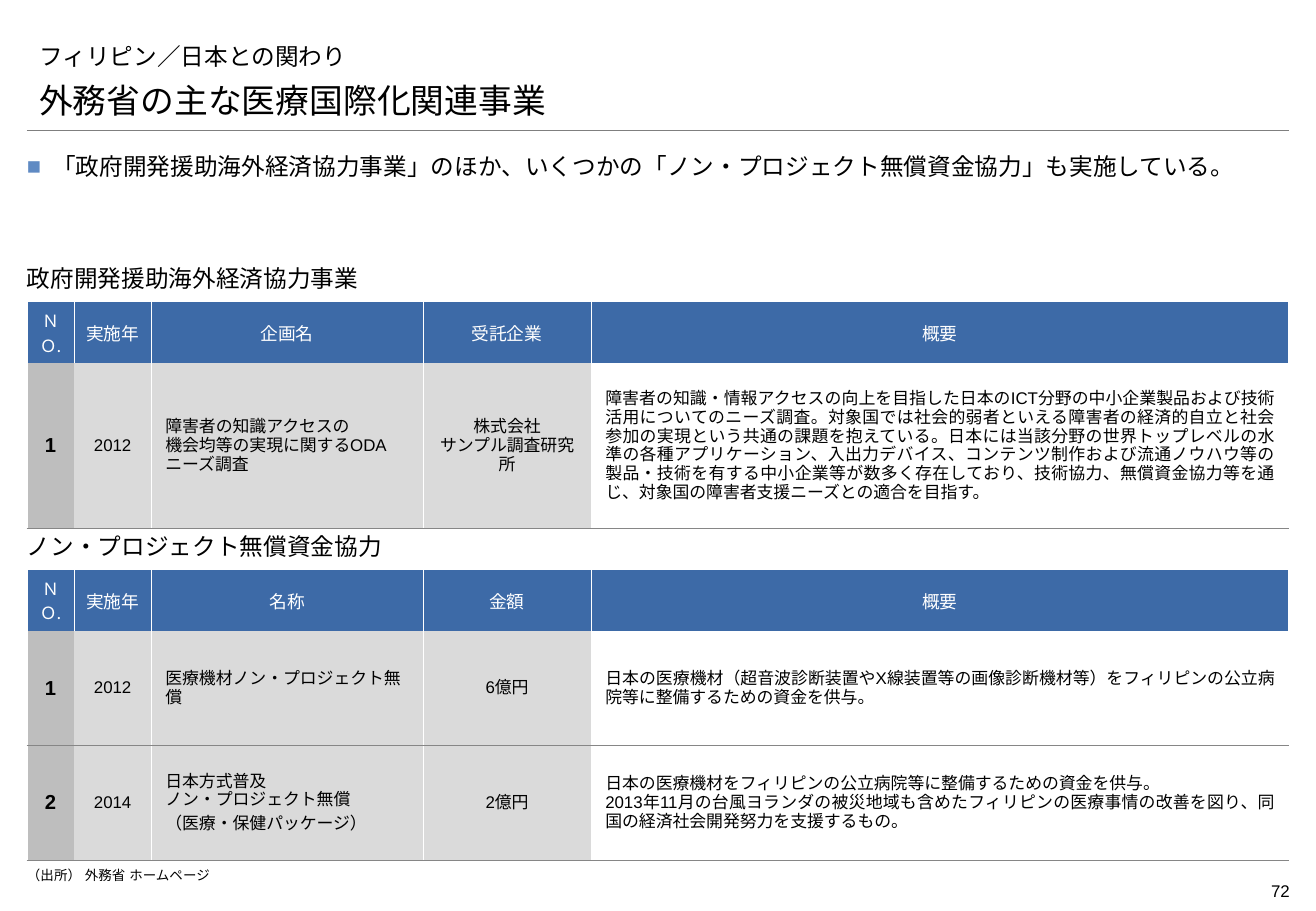
from dataclasses import dataclass

import pptx
import pptx.dml.color
import pptx.enum.shapes
import pptx.enum.text
import pptx.oxml
import pptx.oxml.ns
import pptx.util
from lxml import etree

Pt = pptx.util.Pt
ALIGN = pptx.enum.text.PP_ALIGN
ANCHOR = pptx.enum.text.MSO_ANCHOR
qn = pptx.oxml.ns.qn

TITLE = "フィリピン／日本との関わり"
HEADING = "外務省の主な医療国際化関連事業"
MESSAGE = "「政府開発援助海外経済協力事業」のほか、いくつかの「ノン・プロジェクト無償資金協力」も実施している。"
SOURCE = "（出所） 外務省 ホームページ"
PAGE = "72"

# Each cell is a list of paragraphs; "\n" is a line break inside a paragraph.
SECTIONS = [
    {
        "title": "政府開発援助海外経済協力事業",
        "top": 179.2,
        "row_height": 98,
        "header": ["ＮＯ.", "実施年", "企画名", "受託企業", "概要"],
        "rows": [
            [["1"], ["2012"],
             ["障害者の知識アクセスの\n機会均等の実現に関するODAニーズ調査"],
             ["株式会社\nサンプル調査研究所"],
             ["障害者の知識・情報アクセスの向上を目指した日本のICT分野の中小企業製品および技術活用についての"
              "ニーズ調査。対象国では社会的弱者といえる障害者の経済的自立と社会参加の実現という共通の課題を"
              "抱えている。日本には当該分野の世界トップレベルの水準の各種アプリケーション、入出力デバイス、"
              "コンテンツ制作および流通ノウハウ等の製品・技術を有する中小企業等が数多く存在しており、"
              "技術協力、無償資金協力等を通じ、対象国の障害者支援ニーズとの適合を目指す。"]],
        ],
    },
    {
        "title": "ノン・プロジェクト無償資金協力",
        "top": 337.8,
        "row_height": 68,
        "header": ["ＮＯ.", "実施年", "名称", "金額", "概要"],
        "rows": [
            [["1"], ["2012"], ["医療機材ノン・プロジェクト無償"], ["6億円"],
             ["日本の医療機材（超音波診断装置やX線装置等の画像診断機材等）をフィリピンの公立病院等に"
              "整備するための資金を供与。"]],
            [["2"], ["2014"],
             ["日本方式普及\nノン・プロジェクト無償", "（医療・保健パッケージ）"],
             ["2億円"],
             ["日本の医療機材をフィリピンの公立病院等に整備するための資金を供与。",
              "2013年11月の台風ヨランダの被災地域も含めたフィリピンの医療事情の改善を図り、"
              "同国の経済社会開発努力を支援するもの。"]],
        ],
    },
]


@dataclass(frozen=True)
class Theme:
    text: str = "000000"
    white: str = "FFFFFF"
    header: str = "3D6AA7"
    number: str = "BEBEBE"
    label: str = "DADADA"
    row_line: str = "868686"
    rule: str = "7F7F7F"
    bullet: str = "5F8AC3"
    title_font: str = "Montserrat"
    body_font: str = "Arial"
    header_font: str = "Noto Sans CJK JP"
    heading_size: float = 20
    title_size: float = 14
    number_size: float = 12
    header_size: float = 10.5
    body_size: float = 10
    source_size: float = 8


T = Theme()
LEFT, WIDTH = 16, 748
COLUMNS = [28, 45.6, 161.2, 99.6, 413.6]
HEADER_HEIGHT = 36
TITLE_HEIGHT = 28
# Per column: fill, alignment, side inset, top and bottom inset
BODY_STYLE = [
    (T.number, ALIGN.CENTER, 2.9, 2.2),
    (T.label, ALIGN.CENTER, 2.9, 2.2),
    (T.label, ALIGN.LEFT, 8.5, 5.7),
    (T.label, ALIGN.CENTER, 5.7, 2.2),
    (T.white, ALIGN.JUSTIFY, 8.5, 5.7),
]


def rgb(color):
    return pptx.dml.color.RGBColor.from_string(color)


def write(p, text, size, font=T.body_font, color=T.text, bold=False, align=ALIGN.LEFT):
    p.alignment = align
    for i, line in enumerate(text.split("\n")):
        if i:
            p.add_line_break()
        r = p.add_run()
        r.text = line
        r.font.size, r.font.bold, r.font.name = Pt(size), bold, font
        r.font.color.rgb = rgb(color)
        rPr = r._r.get_or_add_rPr()
        rPr.set("lang", "ja-JP")
        etree.SubElement(rPr, qn("a:ea"), typeface=font)


def set_frame(sp, box, insets, anchor=ANCHOR.TOP):
    """Place a text shape and return its first paragraph."""
    sp.left, sp.top, sp.width, sp.height = map(Pt, box)
    tf = sp.text_frame
    tf.word_wrap = True
    tf.auto_size = pptx.enum.text.MSO_AUTO_SIZE.NONE
    tf.vertical_anchor = anchor
    tf.margin_left, tf.margin_top, tf.margin_right, tf.margin_bottom = map(Pt, insets)
    return tf.paragraphs[0]


def add_text(s, box, insets, anchor=ANCHOR.TOP):
    return set_frame(s.shapes.add_textbox(0, 0, 0, 0), box, insets, anchor)


def set_bullet(p, char=None, indent=0):
    pPr = p._p.get_or_add_pPr()
    pPr.set("marL", str(Pt(indent)))
    pPr.set("indent", str(-Pt(indent)))
    if char is None:
        etree.SubElement(pPr, qn("a:buNone"))
    else:
        clr = etree.SubElement(pPr, qn("a:buClr"))
        etree.SubElement(clr, qn("a:srgbClr"), val=T.bullet)
        etree.SubElement(pPr, qn("a:buFont"), typeface=T.body_font)
        etree.SubElement(pPr, qn("a:buChar"), char=char)
    p.space_before = Pt(0)


def style_cell(cell, fill, insets, borders):
    """Borders are colours for left, right, top and bottom; None hides one."""
    tcPr = cell._tc.get_or_add_tcPr()
    for side, color in zip("LRTB", borders):
        ln = etree.SubElement(tcPr, qn(f"a:ln{side}"), w=str(Pt(0.5)))
        if color:
            solid = etree.SubElement(ln, qn("a:solidFill"))
            etree.SubElement(solid, qn("a:srgbClr"), val=color)
        else:
            etree.SubElement(ln, qn("a:noFill"))
    cell.fill.solid()
    cell.fill.fore_color.rgb = rgb(fill)
    cell.vertical_anchor = ANCHOR.MIDDLE
    cell.margin_left = cell.margin_right = Pt(insets[0])
    cell.margin_top = cell.margin_bottom = Pt(insets[1])


def add_section(s, section):
    top, rows = section["top"], section["rows"]
    p = add_text(s, (LEFT, top - TITLE_HEIGHT, WIDTH, TITLE_HEIGHT),
                 (0, 3.6, 0, 5.8), ANCHOR.BOTTOM)
    write(p, section["title"], T.title_size, T.title_font)

    heights = [HEADER_HEIGHT] + [section["row_height"]] * len(rows)
    table = s.shapes.add_table(len(heights), len(COLUMNS), Pt(LEFT), Pt(top),
                               Pt(WIDTH), Pt(sum(heights))).table
    table.first_row = table.horz_banding = False
    for column, width in zip(table.columns, COLUMNS):
        column.width = Pt(width)
    for row, height in zip(table.rows, heights):
        row.height = Pt(height)

    for c, label in enumerate(section["header"]):
        cell = table.cell(0, c)
        style_cell(cell, T.header, (2.9, 3.6), (T.white, T.white, None, None))
        write(cell.text_frame.paragraphs[0], label, T.header_size if c else T.body_size,
              T.header_font, T.white, align=ALIGN.CENTER)

    for i, row in enumerate(rows, 1):
        for c, paragraphs in enumerate(row):
            cell = table.cell(i, c)
            fill, align, side, vertical = BODY_STYLE[c]
            style_cell(cell, fill, (side, vertical),
                       (None if c == 1 else T.white, T.white if c else None,
                        T.row_line if i > 1 else None, T.row_line))
            tf = cell.text_frame
            for n, text in enumerate(paragraphs):
                p = tf.add_paragraph() if n else tf.paragraphs[0]
                if n and c == 2:
                    p.space_before = Pt(3)
                write(p, text, T.body_size if c else T.number_size, bold=c == 0, align=align)


def main():
    prs = pptx.Presentation()
    prs.slide_width, prs.slide_height = Pt(780), Pt(540)
    s = prs.slides.add_slide(prs.slide_layouts[3])
    title, heading, message = s.placeholders

    p = set_frame(title, (LEFT, 15, WIDTH, 28), (7.2, 0, 7.2, 1.5), ANCHOR.BOTTOM)
    write(p, TITLE, T.title_size, T.title_font)
    p = set_frame(heading, (LEFT, 42, WIDTH, 29), (7.2, 0, 7.2, 0), ANCHOR.BOTTOM)
    set_bullet(p)
    write(p, HEADING, T.heading_size, T.title_font)
    p = set_frame(message, (LEFT, 88.5, WIDTH, 23), (0, 0, 0, 0))
    set_bullet(p, "■", 15)
    p.line_spacing, p.space_after = 1.1, Pt(2)
    write(p, MESSAGE, T.title_size, align=ALIGN.JUSTIFY)

    rule = s.shapes.add_connector(pptx.enum.shapes.MSO_CONNECTOR.STRAIGHT,
                                  Pt(LEFT), Pt(77), Pt(LEFT + WIDTH), Pt(77))
    rule.line.color.rgb, rule.line.width = rgb(T.rule), Pt(0.25)
    etree.SubElement(rule._element.spPr, qn("a:effectLst"))

    for section in SECTIONS:
        add_section(s, section)

    write(add_text(s, (LEFT, 514, 680, 12), (0, 0, 0, 0)), SOURCE, T.source_size)
    write(add_text(s, (708, 518.4, 56.5, 19), (0, 3.6, 0, 3.6)), PAGE, T.body_size,
          align=ALIGN.RIGHT)
    prs.save("out.pptx")


if __name__ == "__main__":
    main()
